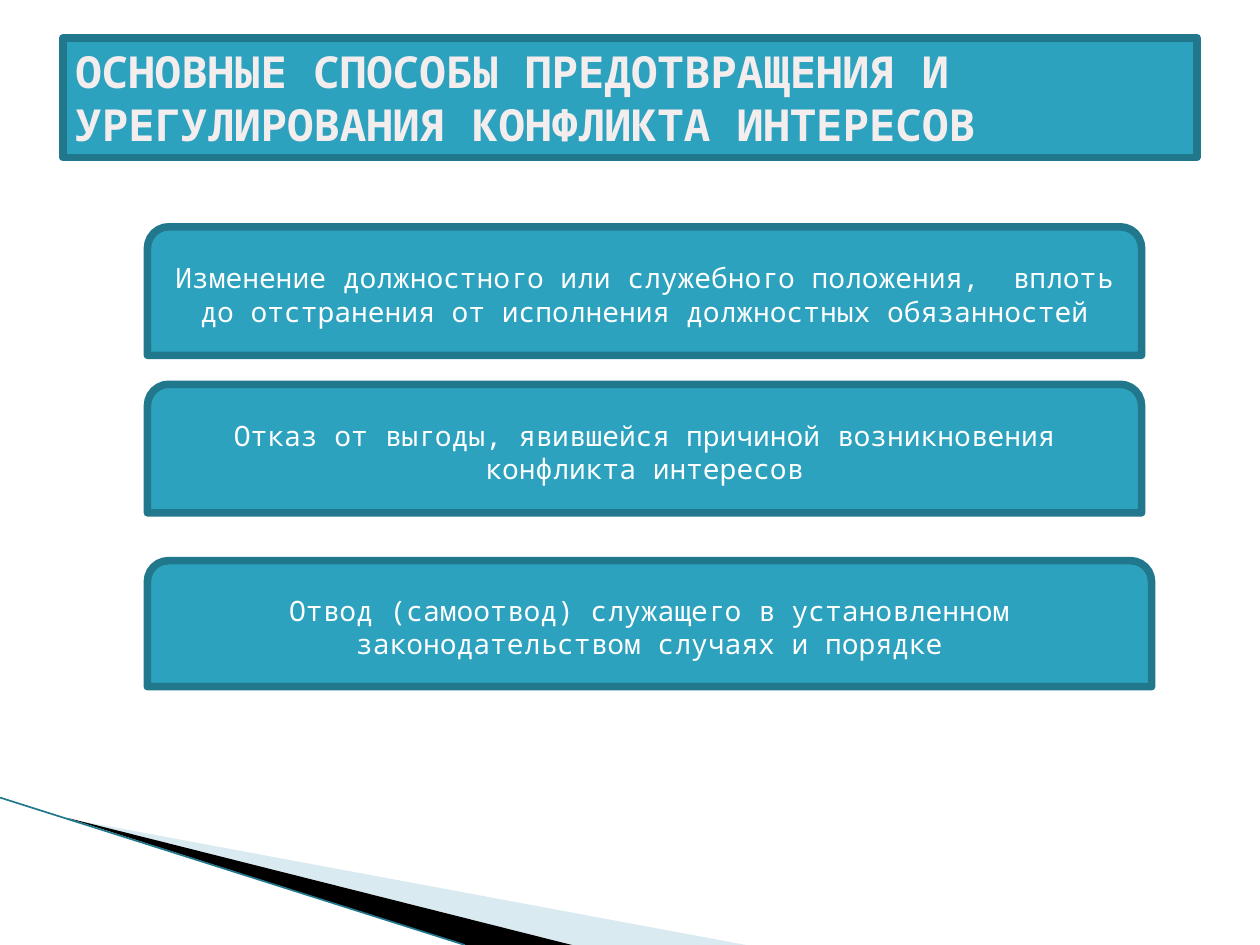
from lxml.etree import SubElement
from pptx import Presentation
from pptx.dml.color import RGBColor
from pptx.enum.shapes import MSO_CONNECTOR as Connector, MSO_SHAPE as Shape
from pptx.enum.text import MSO_ANCHOR as Anchor, PP_ALIGN as Align
from pptx.oxml.ns import qn
from pptx.util import Inches, Pt

COLUMNS, ROWS = 100, 75


def color(value):
    return RGBColor.from_string(value)


class SlideBuilder:
    fill = "2DA2BF"
    border = "21788D"
    border_width = 4.33
    font = "Noto Sans Mono"

    def __init__(self, presentation):
        self.slide = presentation.slides.add_slide(presentation.slide_layouts[6])
        self.shapes = self.slide.shapes
        self.column = presentation.slide_width / COLUMNS
        self.row = presentation.slide_height / ROWS

    def place(self, column, row):
        return round(column * self.column), round(row * self.row)

    def wedge(self, points, fill, opacity=100):
        start, *rest = [self.place(*point) for point in points]
        builder = self.shapes.build_freeform(*start)
        builder.add_line_segments(rest, close=True)
        shape = builder.convert_to_shape()
        shape.shadow.inherit = False
        shape.fill.solid()
        shape.fill.fore_color.rgb = color(fill)
        shape.line.fill.background()
        if opacity < 100:
            tint = shape.fill._xPr.find(qn("a:solidFill"))[0]
            SubElement(tint, qn("a:alpha"), val=str(opacity * 1000))

    def line(self, start, end, width):
        connector = self.shapes.add_connector(
            Connector.STRAIGHT, *self.place(*start), *self.place(*end))
        connector.line.color.rgb = color(self.border)
        connector.line.width = Pt(width)
        SubElement(connector._element.spPr, qn("a:effectLst"))

    def panel(self, kind, box, text, align, font_format, text_color):
        left, top, width, height = box
        shape = self.shapes.add_shape(
            kind, *self.place(left, top), *self.place(width, height))
        shape.shadow.inherit = False
        shape.fill.solid()
        shape.fill.fore_color.rgb = color(self.fill)
        shape.line.color.rgb = color(self.border)
        shape.line.width = Pt(self.border_width)
        frame = shape.text_frame
        frame.word_wrap = True
        frame.vertical_anchor = Anchor.MIDDLE
        paragraph = frame.paragraphs[0]
        paragraph.alignment = align
        run = paragraph.add_run()
        run.text = text
        for name, value in {"name": self.font, **font_format}.items():
            setattr(run.font, name, value)
        run.font.color.rgb = color(text_color)

    def title(self, box, text):
        self.panel(Shape.RECTANGLE, box, text, Align.LEFT,
                   {"size": Pt(25.2), "bold": True}, "F3EDEE")

    def card(self, box, text):
        self.panel(Shape.ROUND_2_SAME_RECTANGLE, box, text, Align.CENTER,
                   {"size": Pt(16)}, "FFFFFF")


def main():
    presentation = Presentation()
    presentation.slide_width = Inches(10)
    presentation.slide_height = Inches(7.5)
    builder = SlideBuilder(presentation)

    builder.wedge([(5.5, 65), (59.2, ROWS), (45.4, ROWS)], "A0CBDC", 40)
    builder.wedge([(5.3, 64.9), (45.4, ROWS), (36.9, ROWS)], "000000")
    builder.line((0, 63.3), (36.9, ROWS), 0.95)

    builder.title((5, 3, 90, 9.5),
                  "ОСНОВНЫЕ СПОСОБЫ ПРЕДОТВРАЩЕНИЯ И УРЕГУЛИРОВАНИЯ КОНФЛИКТА ИНТЕРЕСОВ")
    cards = [
        (18, 78.9, 10.2, "Изменение должностного или служебного положения,  вплоть "
                         "до отстранения от исполнения должностных обязанностей"),
        (30.5, 78.9, 10.2, "Отказ от выгоды, явившейся причиной возникновения "
                           "конфликта интересов"),
        (44.5, 79.7, 10, "Отвод (самоотвод) служащего в установленном "
                         "законодательством случаях и порядке"),
    ]
    for top, width, height, text in cards:
        builder.card((11.7, top, width, height), text)

    presentation.save("out.pptx")


if __name__ == "__main__":
    main()
